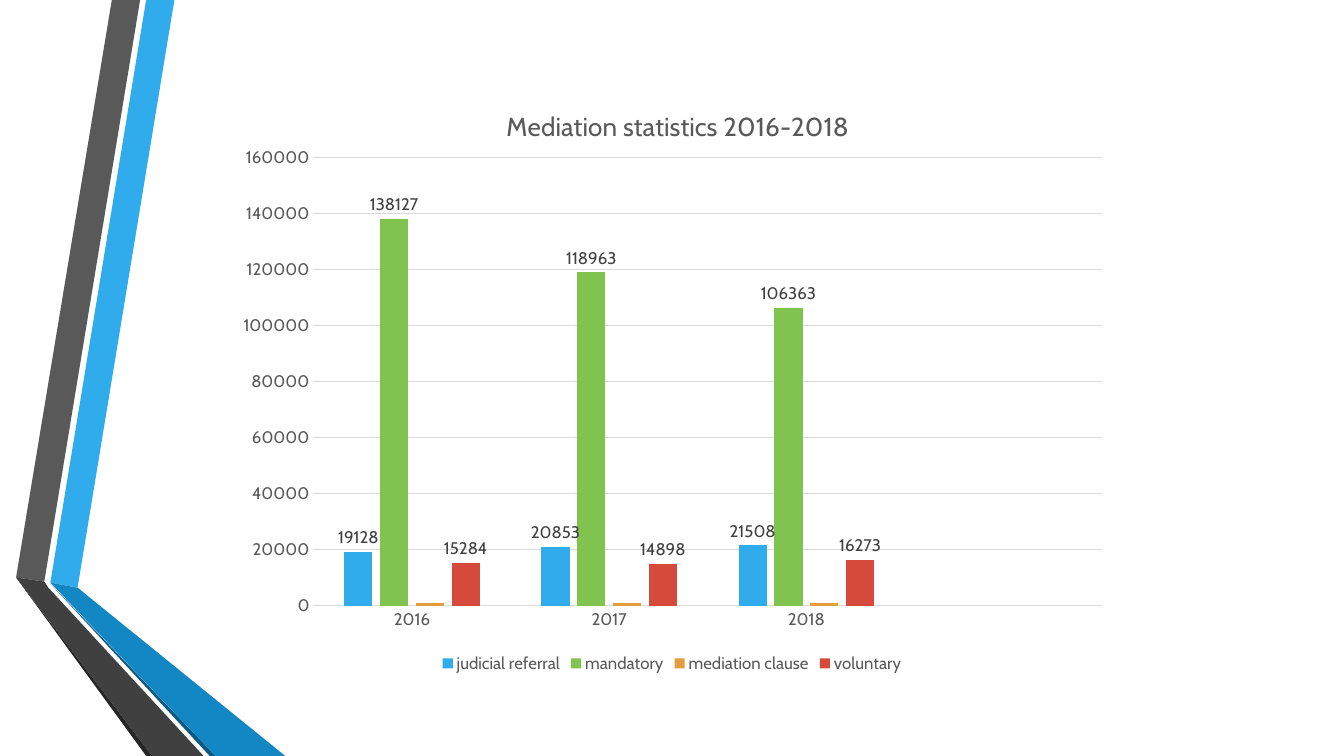
from lxml import etree
from pptx import Presentation
from pptx.chart.data import CategoryChartData
from pptx.dml.color import RGBColor
from pptx.enum import chart as kinds
from pptx.oxml import ns
from pptx.util import Inches, Pt

FONT = "Cabin"
BLUE = RGBColor(0x30, 0xAC, 0xEC)
DEEP = RGBColor(0x12, 0x87, 0xC3)
NAVY = RGBColor(0x0C, 0x5A, 0x82)
GREEN = RGBColor(0x80, 0xC3, 0x4F)
ORANGE = RGBColor(0xE2, 0x9D, 0x3E)
RED = RGBColor(0xD6, 0x4A, 0x3B)
GRAY = RGBColor(0x59, 0x59, 0x59)
DARK = RGBColor(0x40, 0x40, 0x40)
BLACK = RGBColor(0x26, 0x26, 0x26)
PALE = RGBColor(0xD9, 0xD9, 0xD9)


def style(font, size, color):
    font.name = FONT
    font.size = Pt(size)
    font.bold = False
    font.color.rgb = color


def place(part, index, **sizes):
    """Give a chart part a manual layout, in fractions of the chart."""
    for old in part.findall(ns.qn("c:layout")):
        part.remove(old)
    layout = etree.Element(ns.qn("c:layout"))
    manual = etree.SubElement(layout, ns.qn("c:manualLayout"))
    for tag, value in sizes.items():
        etree.SubElement(manual, ns.qn("c:" + tag)).set("val", str(value))
    part.insert(index, layout)


prs = Presentation()
prs.slide_width = Inches(13.33)
prs.slide_height = Inches(7.5)
slide = prs.slides.add_slide(prs.slide_layouts[6])

# Folded ribbons on the left
ribbons = [
    (BLUE, [(0.5, 5.78), (0.77, 5.83), (1.73, 0), (1.45, 0)]),
    (GRAY, [(1.39, 0), (1.11, 0), (0.16, 5.73), (0.44, 5.77)]),
    (BLACK, [(0.16, 5.73), (1.45, 7.5), (1.51, 7.5)]),
    (NAVY, [(0.5, 5.79), (2.08, 7.5), (2.14, 7.5)]),
    (DEEP, [(0.5, 5.78), (2.14, 7.5), (2.83, 7.5), (0.77, 5.83)]),
    (DARK, [(2.02, 7.5), (0.48, 5.83), (0.44, 5.77), (0.16, 5.73), (1.51, 7.5)]),
]
for color, points in ribbons:
    x, y = points[0]
    pen = slide.shapes.build_freeform(Inches(x), Inches(y))
    pen.add_line_segments([(Inches(x), Inches(y)) for x, y in points[1:]])
    ribbon = pen.convert_to_shape()
    ribbon.shadow.inherit = False
    ribbon.fill.solid()
    ribbon.fill.fore_color.rgb = color
    ribbon.line.fill.background()

# Mediation chart
rows = [
    ("judicial referral", BLUE, (19128, 20853, 21508, None)),
    ("mandatory", GREEN, (138127, 118963, 106363, None)),
    ("mediation clause", ORANGE, (1000, 1000, 1000, None)),
    ("voluntary", RED, (15284, 14898, 16273, None)),
]
data = CategoryChartData()
data.categories = ["2016", "2017", "2018", ""]
for name, color, values in rows:
    data.add_series(name, values)
chart = slide.shapes.add_chart(
    kinds.XL_CHART_TYPE.COLUMN_CLUSTERED,
    Inches(2.22), Inches(0.79), Inches(8.89), Inches(5.93), data).chart
style(chart.font, 12, GRAY)

title = chart.chart_title
title.text_frame.text = "Mediation statistics 2016-2018"
style(title.text_frame.paragraphs[0].runs[0].font, 18.6, GRAY)
title.include_in_layout = False
place(title._element, 1, xMode="edge", yMode="edge", x=0.31, y=0.04)

chart.has_legend = True
chart.legend.position = kinds.XL_LEGEND_POSITION.BOTTOM
chart.legend.include_in_layout = False
style(chart.legend.font, 12, GRAY)

years, counts = chart.category_axis, chart.value_axis
for axis in (years, counts):
    axis.major_tick_mark = axis.minor_tick_mark = kinds.XL_TICK_MARK.NONE
    style(axis.tick_labels.font, 12, GRAY)
counts.minimum_scale = 0
counts.maximum_scale = 160000
counts.major_unit = 20000
counts.format.line.fill.background()
for line in (years.format.line, counts.major_gridlines.format.line):
    line.color.rgb = PALE
    line.width = Pt(0.75)

plot = chart.plots[0]
plot.gap_width = 219
plot.overlap = -27
plot.vary_by_categories = False
for series, (name, color, values) in zip(plot.series, rows):
    series.format.fill.solid()
    series.format.fill.fore_color.rgb = color
    if name != "mediation clause":
        labels = series.data_labels
        labels.show_value = True
        labels.position = kinds.XL_LABEL_POSITION.OUTSIDE_END
        style(labels.font, 12, DARK)

area = chart._chartSpace.find(".//" + ns.qn("c:plotArea"))
place(area, 0, layoutTarget="inner", xMode="edge", yMode="edge",
      x=0.1, y=0.13, w=0.88, h=0.75)

prs.save("out.pptx")
